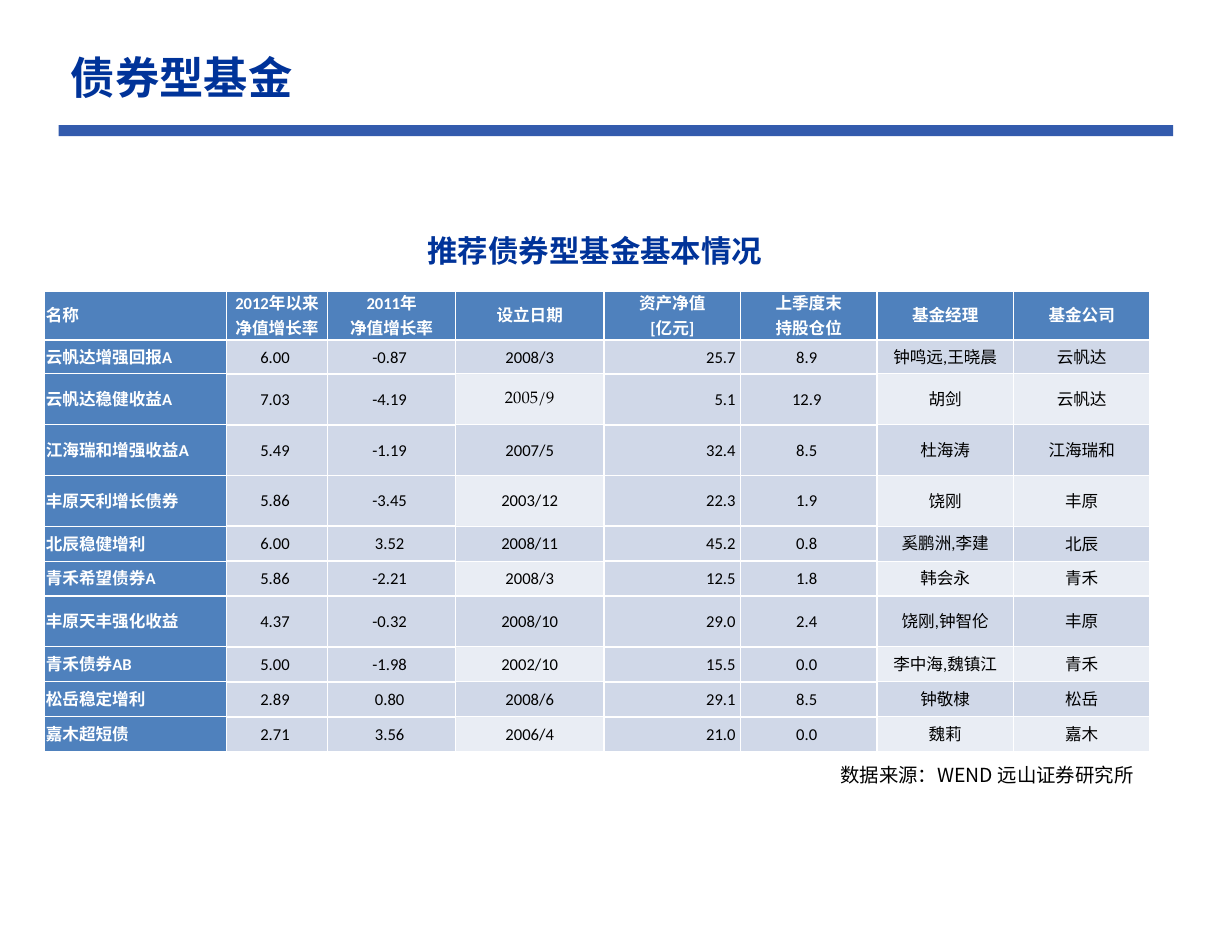
import itertools

import pptx
import pptx.dml.color
import pptx.enum.lang
import pptx.enum.shapes
import pptx.enum.text
import pptx.oxml
import pptx.oxml.ns
import pptx.util

RGBColor = pptx.dml.color.RGBColor
ALIGN = pptx.enum.text.PP_ALIGN
ANCHOR = pptx.enum.text.MSO_ANCHOR

NAVY = RGBColor(0x00, 0x33, 0x99)
HEADER_BLUE = RGBColor(0x4F, 0x81, 0xBD)
BAND_DARK = RGBColor(0xD0, 0xD8, 0xE8)
BAND_LIGHT = RGBColor(0xE9, 0xED, 0xF4)
WHITE = RGBColor(0xFF, 0xFF, 0xFF)
BLACK = RGBColor(0x00, 0x00, 0x00)

HEADING_FONT = "Noto Sans CJK SC"
CHINESE_FONT = "Arial"
NUMBER_FONT = "Calibri"
SERIF_FONT = "TeX Gyre Pagella"

HEADERS = [
    ["名称", "2012年以来", "2011年", "设立日期", "资产净值", "上季度末", "基金经理", "基金公司"],
    ["", "净值增长率", "净值增长率", "", "[亿元]", "持股仓位", "", ""],
]
FUNDS = [
    ["云帆达增强回报A", "6.00", "-0.87", "2008/3", "25.7", "8.9", "钟鸣远,王晓晨", "云帆达"],
    ["云帆达稳健收益A", "7.03", "-4.19", "2005/9", "5.1", "12.9", "胡剑", "云帆达"],
    ["江海瑞和增强收益A", "5.49", "-1.19", "2007/5", "32.4", "8.5", "杜海涛", "江海瑞和"],
    ["丰原天利增长债券", "5.86", "-3.45", "2003/12", "22.3", "1.9", "饶刚", "丰原"],
    ["北辰稳健增利", "6.00", "3.52", "2008/11", "45.2", "0.8", "奚鹏洲,李建", "北辰"],
    ["青禾希望债券A", "5.86", "-2.21", "2008/3", "12.5", "1.8", "韩会永", "青禾"],
    ["丰原天丰强化收益", "4.37", "-0.32", "2008/10", "29.0", "2.4", "饶刚,钟智伦", "丰原"],
    ["青禾债券AB", "5.00", "-1.98", "2002/10", "15.5", "0.0", "李中海,魏镇江", "青禾"],
    ["松岳稳定增利", "2.89", "0.80", "2008/6", "29.1", "8.5", "钟敬棣", "松岳"],
    ["嘉木超短债", "2.71", "3.56", "2006/4", "21.0", "0.0", "魏莉", "嘉木"],
]
NAME_COLUMN, ASSET_COLUMN = 0, 4
FIGURE_COLUMNS = {1, 2, 4, 5}
BANDED_COLUMNS = {3, 6, 7}
COLUMN_WIDTHS = [14.72, 8.25, 10.36, 12.06] + [11.08] * 4
ROW_HEIGHTS = [2.66, 2.56, 3.62] + [5.43] * 3 + [3.73] * 2 + [5.43] + [3.73] * 3


def set_typeface(font, typeface):
    """Use one typeface for both Latin and East Asian letters."""
    font.name = typeface
    east_asian = pptx.oxml.ns.qn("a:ea")
    font._rPr.append(font._rPr.makeelement(east_asian, {"typeface": typeface}))


class FundSlide:
    """One slide; every length is a percentage of its width or height."""

    def __init__(self, width, height):
        self.deck = pptx.Presentation()
        self.deck.slide_width = pptx.util.Inches(width)
        self.deck.slide_height = pptx.util.Inches(height)
        self.slide = self.deck.slides.add_slide(self.deck.slide_layouts[6])

    def across(self, share):
        return int(self.deck.slide_width * share / 100)

    def down(self, share):
        return int(self.deck.slide_height * share / 100)

    def box(self, left, top, width, height):
        return self.across(left), self.down(top), self.across(width), self.down(height)

    def rule(self, left, right, top, weight, opacity):
        line = self.slide.shapes.add_connector(
            pptx.enum.shapes.MSO_CONNECTOR.STRAIGHT,
            self.across(left), self.down(top), self.across(right), self.down(top))
        line.line.color.rgb = NAVY
        line.line.width = pptx.util.Pt(weight)
        properties = line._element.spPr
        colour = next(properties.iter(pptx.oxml.ns.qn("a:srgbClr")))
        colour.append(colour.makeelement(
            pptx.oxml.ns.qn("a:alpha"), {"val": str(opacity * 1000)}))
        properties.append(properties.makeelement(pptx.oxml.ns.qn("a:effectLst"), {}))

    def text(self, words, place, size, color=NAVY, bold=True, wrap=True,
             anchor=ANCHOR.TOP, spacing=0.9):
        frame = self.slide.shapes.add_textbox(*self.box(*place)).text_frame
        frame.word_wrap = wrap
        frame.vertical_anchor = anchor
        frame.margin_left = frame.margin_right = pptx.util.Inches(0.12)
        frame.margin_top = frame.margin_bottom = pptx.util.Inches(0.06)
        paragraph = frame.paragraphs[0]
        paragraph.line_spacing = spacing
        self.fill_paragraph(paragraph, words, size, color, bold, HEADING_FONT)

    def fill_paragraph(self, paragraph, words, size, color, bold, typeface=None):
        """Set words and font; without a typeface, choose one for each script."""
        paragraph.font.size = pptx.util.Pt(size)
        paragraph.font.bold = bold
        paragraph.font.color.rgb = color
        if typeface:
            parts = [(False, words)]
        else:
            parts = [(latin, "".join(letters))
                     for latin, letters in itertools.groupby(words, str.isascii)]
        for latin, part in parts:
            run = paragraph.add_run()
            run.text = part
            run.font.language_id = pptx.enum.lang.MSO_LANGUAGE_ID.SIMPLIFIED_CHINESE
            font = paragraph.font if len(parts) == 1 else run.font
            set_typeface(font, typeface or (NUMBER_FONT if latin else CHINESE_FONT))

    def borders(self, cell, top, bottom):
        """White cell edges; a weight of 0 hides the edge."""
        properties = cell._tc.get_or_add_tcPr()
        for side, weight in (("L", 1), ("R", 1), ("T", top), ("B", bottom)):
            fill = f'<a:solidFill><a:srgbClr val="{WHITE}"/></a:solidFill>'
            properties.append(pptx.oxml.parse_xml(
                f'<a:ln{side} {pptx.oxml.ns.nsdecls("a")} w="{int(weight * 12700)}">'
                f'{fill if weight else "<a:noFill/>"}</a:ln{side}>'))

    def cell(self, cell, words, fill, edges, align, color, bold, right_margin, typeface):
        self.borders(cell, *edges)
        cell.fill.solid()
        cell.fill.fore_color.rgb = fill
        cell.vertical_anchor = ANCHOR.MIDDLE
        cell.margin_left = cell.margin_top = pptx.util.Inches(0.01)
        cell.margin_right = pptx.util.Inches(right_margin)
        cell.margin_bottom = 0
        if words:
            paragraph = cell.text_frame.paragraphs[0]
            paragraph.alignment = align
            self.fill_paragraph(paragraph, words, 12, color, bold, typeface)

    def fund_table(self, left, top):
        rows = HEADERS + FUNDS
        place = self.box(left, top, sum(COLUMN_WIDTHS), sum(ROW_HEIGHTS))
        table = self.slide.shapes.add_table(len(rows), len(COLUMN_WIDTHS), *place).table
        table.first_row = table.horz_banding = False
        for column, width in zip(table.columns, COLUMN_WIDTHS):
            column.width = self.across(width)
        for row, height in zip(table.rows, ROW_HEIGHTS):
            row.height = self.down(height)
        for c in {NAME_COLUMN} | BANDED_COLUMNS:
            table.cell(0, c).merge(table.cell(1, c))

        last = len(rows) - 1
        for r, row in enumerate(rows):
            for c, words in enumerate(row):
                header = r < len(HEADERS)
                figure = c in FIGURE_COLUMNS and not header
                strong = header or c == NAME_COLUMN
                if header:
                    merged = c not in FIGURE_COLUMNS
                    edges = (1, 1.5 if merged else 0) if r == 0 else (0, 1.5)
                else:
                    edges = (1.5 if figure or r == len(HEADERS) else 1,
                             1.5 if figure and r < last else 1)
                light = c in BANDED_COLUMNS and r % 2
                band = BAND_LIGHT if light else BAND_DARK
                if c == NAME_COLUMN:
                    align = ALIGN.LEFT
                else:
                    align = ALIGN.RIGHT if figure and c == ASSET_COLUMN else ALIGN.CENTER
                self.cell(table.cell(r, c), words, HEADER_BLUE if strong else band,
                          edges, align, WHITE if strong else BLACK, strong,
                          0.05 if figure else 0.01,
                          SERIF_FONT if words == "2005/9" else None)


def main():
    page = FundSlide(12.36, 9.39)
    page.rule(4.77, 95.23, 13.95, weight=8, opacity=80)
    page.text("债券型基金", (4.77, 2.24, 90.05, 12.57), 32, anchor=ANCHOR.MIDDLE)
    page.text("推荐债券型基金基本情况", (33.74, 24.6, 29.61, 5.32), 22, wrap=False)
    page.fund_table(3.64, 31.1)
    page.text("数据来源：WEND 远山证券研究所", (67.23, 81.26, 25.81, 3.83), 14,
              color=BLACK, bold=False, spacing=0.85)
    page.deck.save("out.pptx")


if __name__ == "__main__":
    main()
